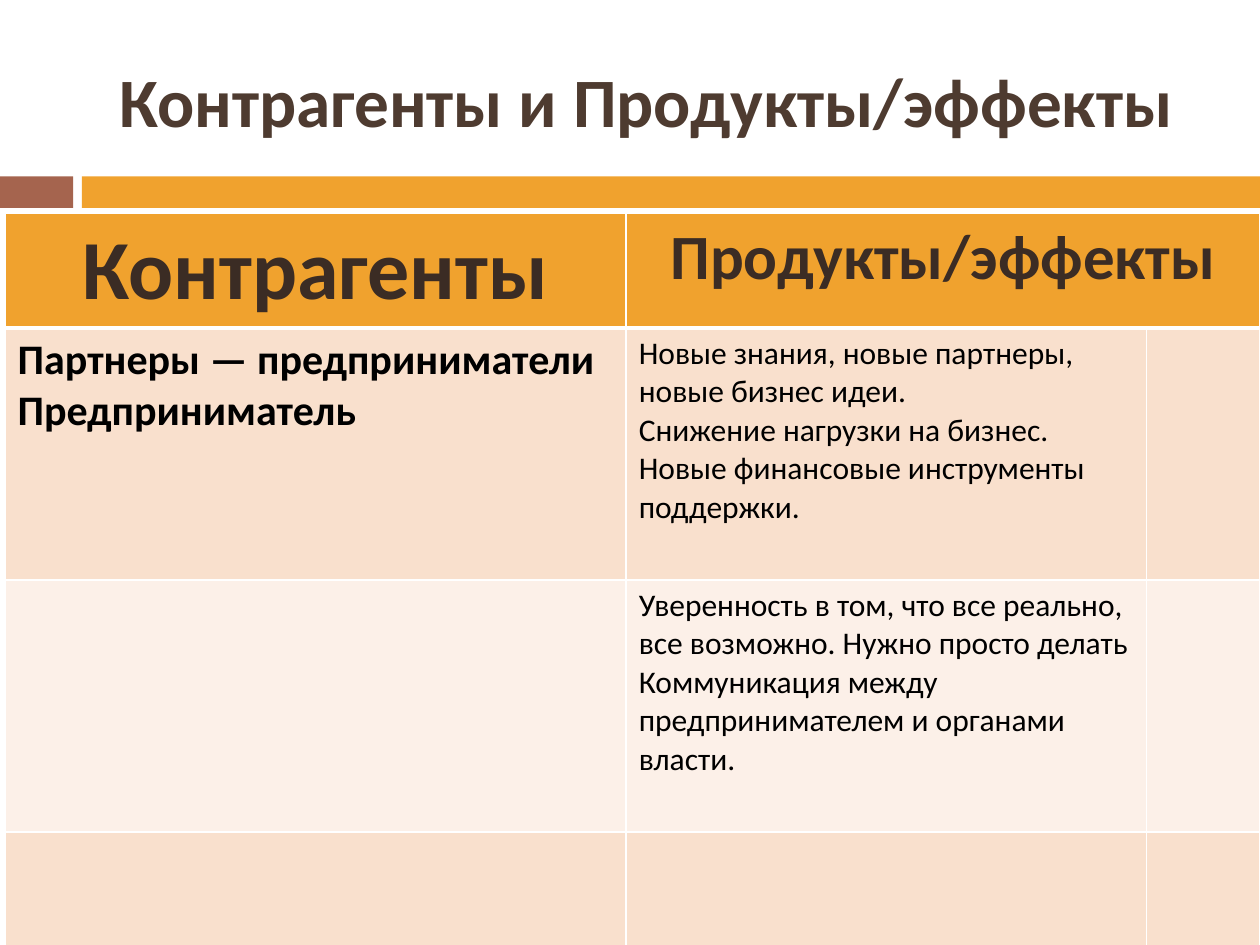
from lxml.etree import SubElement
from pptx import Presentation
from pptx.dml.color import RGBColor
from pptx.enum.shapes import MSO_SHAPE
from pptx.enum.text import MSO_ANCHOR, PP_ALIGN
from pptx.oxml.ns import qn
from pptx.util import Inches, Pt

FONT = "Calibri"
ORANGE, BROWN, WHITE = "F0A22E", "A5644E", "FFFFFF"
BANDS = ["F9E0CD", "FCF0E8"]

COLS = [4.93, 4.13, 0.9]
ROWS = [0.9, 2, 2, 1]
HEADERS = [("Контрагенты", 48), ("Продукты/эффекты", 36)]
PARTNERS = ["Партнеры — предприниматели", "Предприниматель"]
EFFECTS = [
    ["Новые знания, новые партнеры, новые бизнес идеи.",
     "Снижение нагрузки на бизнес.",
     "Новые финансовые инструменты поддержки."],
    ["Уверенность в том, что все реально, все возможно. Нужно просто делать",
     "Коммуникация между предпринимателем и органами власти."],
]


def rgb(value):
    return RGBColor.from_string(value)


def inches(box):
    return [Inches(v) for v in box]


def write(tf, lines, size, color, bold=False, align=PP_ALIGN.LEFT):
    tf.text = "\n".join(lines)
    for p in tf.paragraphs:
        p.alignment = align
        p.font.name, p.font.size, p.font.bold = FONT, Pt(size), bold
        p.font.color.rgb = rgb(color)


def add_bar(s, box, color):
    sp = s.shapes.add_shape(MSO_SHAPE.RECTANGLE, *inches(box))
    sp.shadow.inherit = False
    sp.fill.solid()
    sp.fill.fore_color.rgb = rgb(color)
    sp.line.fill.background()


def place_title(s, box, text):
    title = s.shapes.title
    title.left, title.top, title.width, title.height = inches(box)
    tf = title.text_frame
    tf.word_wrap = True
    tf.vertical_anchor = MSO_ANCHOR.MIDDLE
    write(tf, [text], 39.6, "4E3B30", True, PP_ALIGN.CENTER)


def style_cell(cell, color, bottom=1, top=1):
    # Borders come before the fill in the cell properties
    tc_pr = cell._tc.get_or_add_tcPr()
    for side, width in (("L", 1), ("R", 1), ("T", top), ("B", bottom)):
        ln = SubElement(tc_pr, qn(f"a:ln{side}"), w=str(Pt(width)))
        fill = SubElement(ln, qn("a:solidFill"))
        SubElement(fill, qn("a:srgbClr"), val=WHITE)
    cell.fill.solid()
    cell.fill.fore_color.rgb = rgb(color)


def add_grid(s, left, top):
    box = inches((left, top, sum(COLS), sum(ROWS)))
    table = s.shapes.add_table(len(ROWS), len(COLS), *box).table
    for column, width in zip(table.columns, COLS):
        column.width = Inches(width)
    for row, height in zip(table.rows, ROWS):
        row.height = Inches(height)

    # Orange header over banded rows, parted by a thick line
    for r, row in enumerate(table.rows):
        for cell in row.cells:
            style_cell(cell, BANDS[(r - 1) % 2] if r else ORANGE,
                       bottom=1 if r else 3, top=3 if r == 1 else 1)
    table.cell(0, 1).merge(table.cell(0, 2))

    # Wording
    for c, (text, size) in enumerate(HEADERS):
        write(table.cell(0, c).text_frame, [text], size, "3B2C24", True,
              PP_ALIGN.CENTER)
    write(table.cell(1, 0).text_frame, PARTNERS, 24, "000000", True)
    for r, lines in enumerate(EFFECTS, start=1):
        write(table.cell(r, 1).text_frame, lines, 18, "000000")


def main():
    prs = Presentation()
    prs.slide_width, prs.slide_height = Inches(10), Inches(7.5)
    s = prs.slides.add_slide(prs.slide_layouts[5])
    # Divider under the title
    add_bar(s, (0, 1.4, 0.58, 0.25), BROWN)
    add_bar(s, (0.65, 1.4, 9.35, 0.25), ORANGE)
    place_title(s, (0.67, 0.25, 8.92, 1.08), "Контрагенты и Продукты/эффекты")
    add_grid(s, 0.04, 1.69)
    prs.save("out.pptx")


if __name__ == "__main__":
    main()
